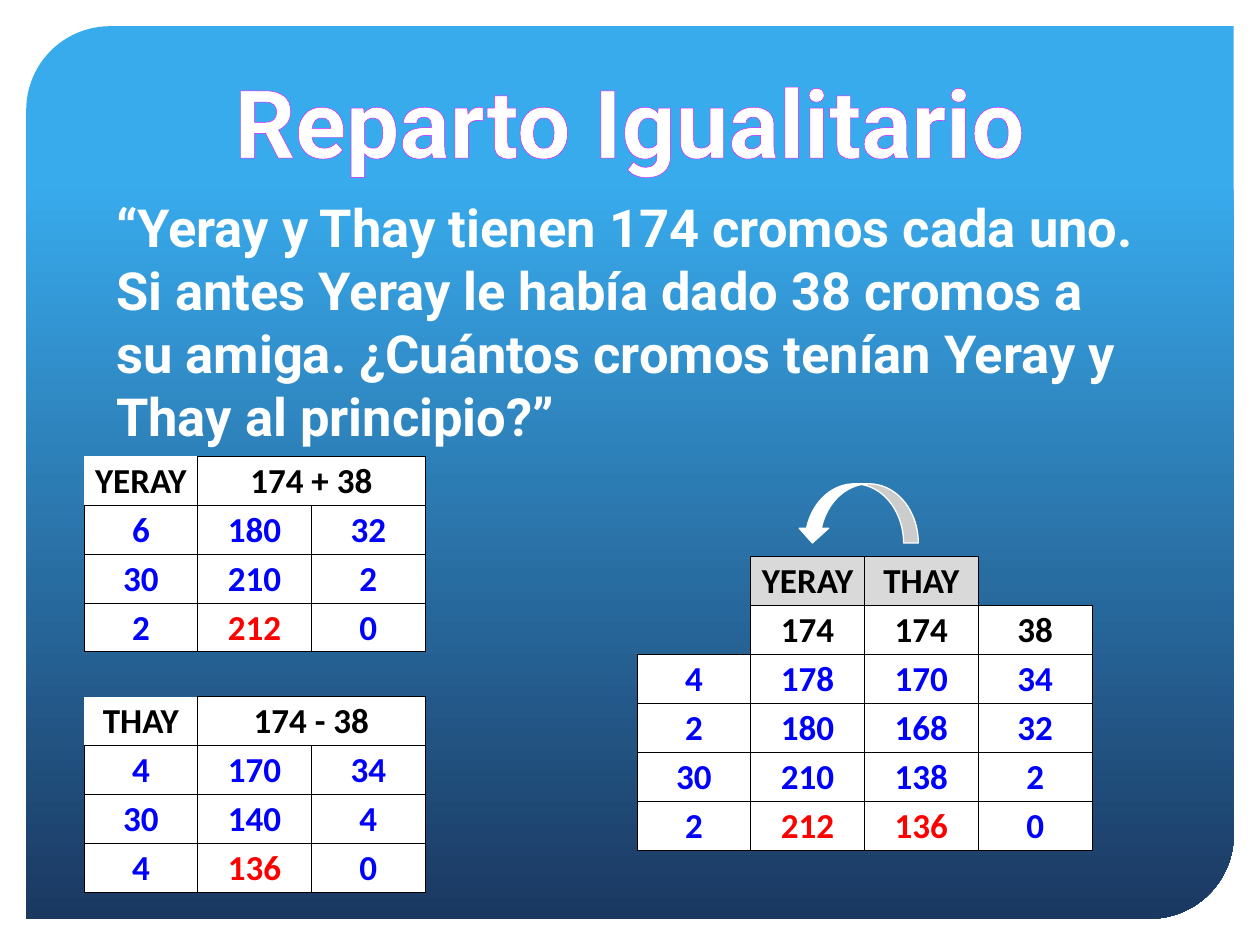
"""Build the "Reparto Igualitario" slide: a word problem solved with three number grids."""
from lxml.etree import SubElement
from pptx import Presentation
from pptx.dml.color import RGBColor as RGB
from pptx.enum.shapes import MSO_SHAPE as SHAPE
from pptx.enum.text import MSO_ANCHOR as ANCHOR, MSO_AUTO_SIZE as AUTO_SIZE, PP_ALIGN as ALIGN
from pptx.oxml.ns import qn
from pptx.util import Pt

COLORS = {
    "sky": "38ABED", "navy": "1B3861", "white": "FFFFFF", "black": "000000",
    "gray": "D9D9D9", "step": "0000FF", "result": "FF0000", "outline": "E113FF",
}
NO_STYLE = "{2D5ABB26-0587-4C30-8999-92F81FD0307C}"
COLUMN_WIDTH, ROW_HEIGHT = 65, 28


def color(name):
    return RGB.from_string(COLORS[name])


def add_line(parent, tag, width, name):
    line = SubElement(parent, qn(tag), w=str(Pt(width)))
    fill = SubElement(line, qn("a:solidFill"))
    SubElement(fill, qn("a:srgbClr"), val=COLORS[name])


deck = Presentation()
deck.slide_width, deck.slide_height = Pt(720), Pt(540)
page = deck.slides.add_slide(deck.slide_layouts[5])

panel = page.shapes.add_shape(SHAPE.ROUND_2_DIAG_RECTANGLE, Pt(15), Pt(15), Pt(690), Pt(510))
panel.adjustments[0], panel.adjustments[1] = 0.094, 0
panel.shadow.inherit = False
panel.line.fill.background()
panel.fill.gradient()
panel.fill.gradient_angle = 270
for stop, position, name in zip(panel.fill.gradient_stops, (0.17, 1), ("sky", "navy")):
    stop.position = position
    stop.color.rgb = color(name)

title = page.shapes.title
title.element.addprevious(panel.element)
title.left, title.top, title.width, title.height = Pt(115), Pt(32.4), Pt(490), Pt(72.7)
title.text_frame.text = "Reparto Igualitario"
title.text_frame.word_wrap = False

problem = page.shapes.add_textbox(Pt(59.3), Pt(108), Pt(607), Pt(152.6))
problem.text_frame.word_wrap = True
problem.text_frame.text = (
    "“Yeray y Thay tienen 174 cromos cada uno. Si antes Yeray le había dado 38 cromos "
    "a su amiga. ¿Cuántos cromos tenían Yeray y Thay al principio?”"
)

for box, size, align in ((title, 54, ALIGN.CENTER), (problem, 30, ALIGN.LEFT)):
    box.text_frame.auto_size = AUTO_SIZE.NONE
    para = box.text_frame.paragraphs[0]
    para.alignment = align
    para.font.name, para.font.size, para.font.bold = "Roboto", Pt(size), True
    para.font.color.rgb = color("white")

title_span = title.text_frame.paragraphs[0].runs[0]
add_line(title_span._r.get_or_add_rPr(), "a:ln", 1, "outline")

arrow = page.shapes.add_shape(SHAPE.CURVED_DOWN_ARROW, Pt(455.8), Pt(276.5), Pt(69), Pt(33.8))
arrow.element.spPr.find(qn("a:xfrm")).set("flipH", "1")
arrow.shadow.inherit = False
arrow.fill.solid()
arrow.fill.fore_color.rgb = color("white")
arrow.line.color.rgb = color("white")
arrow.line.width = Pt(0.75)

grids = [
    (48, 260.6, 1, "white", [
        ["YERAY", "174 + 38", None],
        ["6", "180", "32"],
        ["30", "210", "2"],
        ["2", "212", "0"],
    ]),
    (48, 398, 1, "white", [
        ["THAY", "174 - 38", None],
        ["4", "170", "34"],
        ["30", "140", "4"],
        ["4", "136", "0"],
    ]),
    (364, 318, 2, "gray", [
        ["", "YERAY", "THAY", ""],
        ["", "174", "174", "38"],
        ["4", "178", "170", "34"],
        ["2", "180", "168", "32"],
        ["30", "210", "138", "2"],
        ["2", "212", "136", "0"],
    ]),
]
sides = {"a:lnL": (0, -1), "a:lnR": (0, 1), "a:lnT": (-1, 0), "a:lnB": (1, 0)}

for left, top, header_rows, header_fill, rows in grids:
    row_count, column_count = len(rows), len(rows[0])
    frame = page.shapes.add_table(
        row_count, column_count, Pt(left), Pt(top),
        Pt(COLUMN_WIDTH * column_count), Pt(ROW_HEIGHT * row_count))
    table = frame.table
    table.first_row = table.horz_banding = False
    table._tbl.tblPr.find(qn("a:tableStyleId")).text = NO_STYLE
    for column in table.columns:
        column.width = Pt(COLUMN_WIDTH)
    for row in table.rows:
        row.height = Pt(ROW_HEIGHT)
    used = {(r, c) for r, row in enumerate(rows) for c, text in enumerate(row) if text != ""}

    for r, row in enumerate(rows):
        for c, text in enumerate(row):
            cell = table.cell(r, c)
            cell.vertical_anchor = ANCHOR.MIDDLE
            cell.margin_left = cell.margin_right = cell.margin_top = Pt(0.75)
            cell.margin_bottom = 0
            for tag, (down, across) in sides.items():
                outer_corner = r == c == 0 and tag in ("a:lnL", "a:lnT")
                if not outer_corner and used & {(r, c), (r + down, c + across)}:
                    add_line(cell._tc.get_or_add_tcPr(), tag, 0.5, "black")
            if (r, c) not in used:
                cell.fill.background()
                continue
            cell.fill.solid()
            cell.fill.fore_color.rgb = color(header_fill if r == 0 else "white")
            if text is None:
                table.cell(r, c - 1).merge(cell)
                continue
            if r < header_rows:
                ink = "black"
            elif r == row_count - 1 and 0 < c < column_count - 1:
                ink = "result"
            else:
                ink = "step"
            cell.text = text
            para = cell.text_frame.paragraphs[0]
            para.alignment = ALIGN.CENTER
            para.font.name, para.font.size, para.font.bold = "Calibri", Pt(20), True
            para.font.color.rgb = color(ink)

deck.save("out.pptx")
